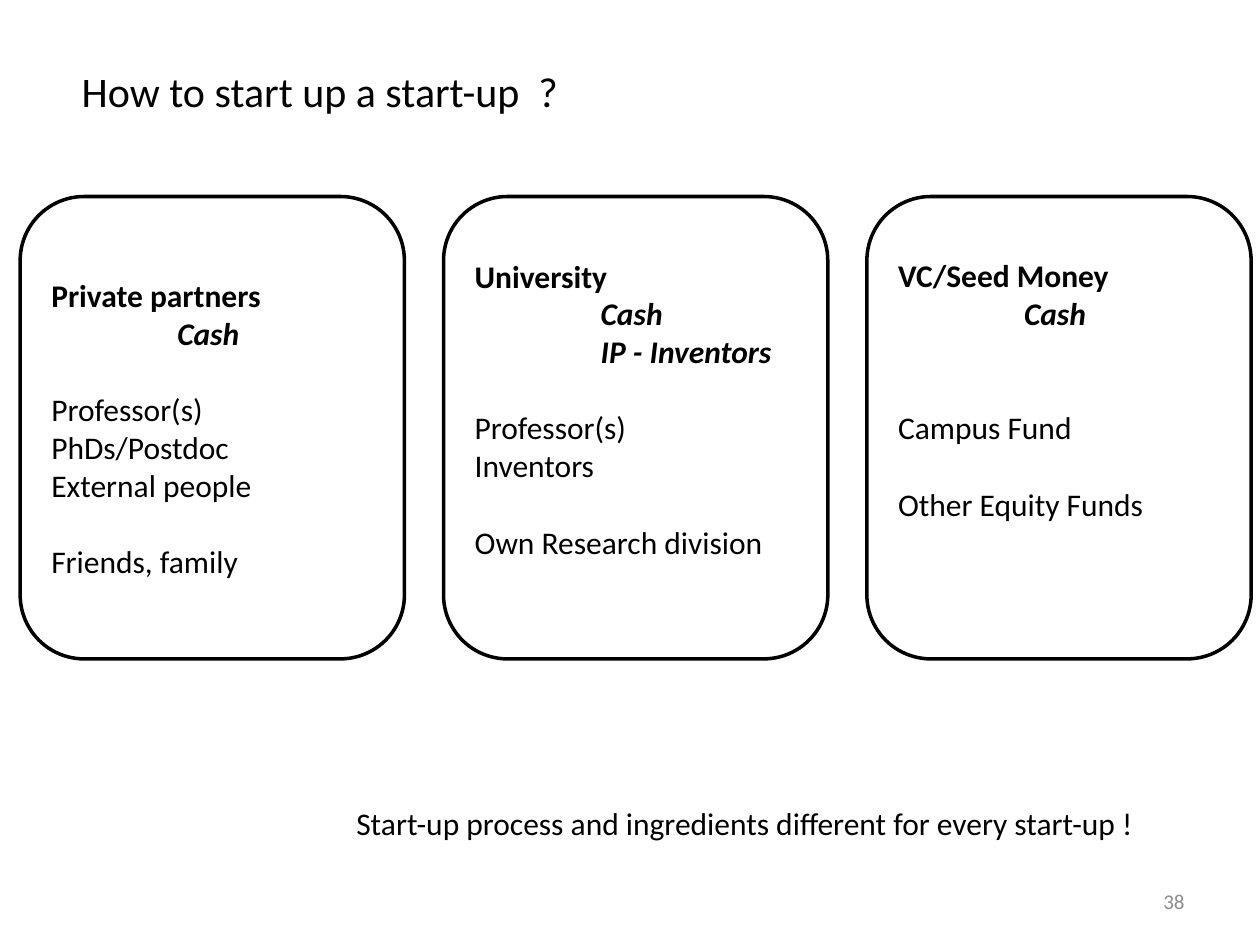
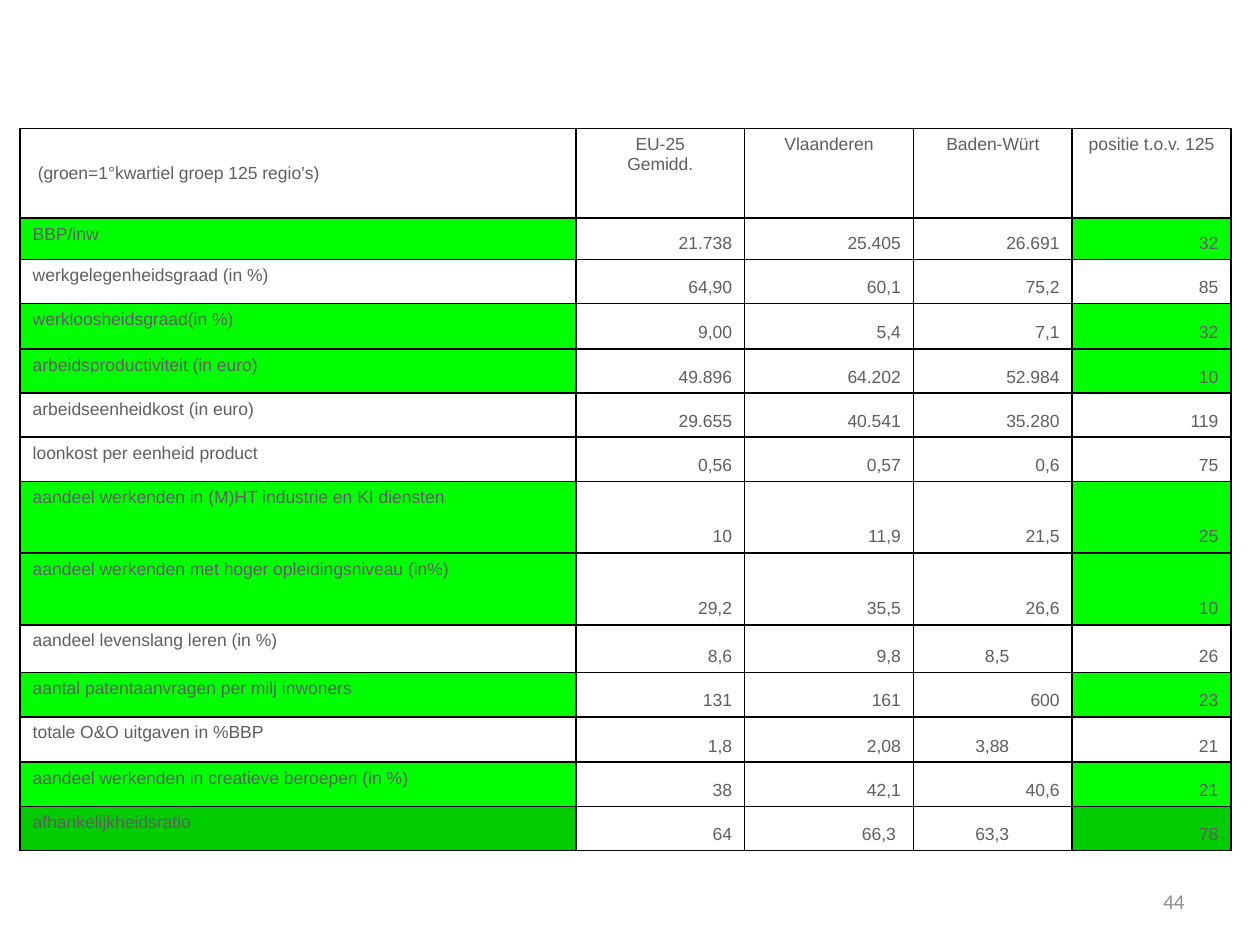
from lxml import etree
from pptx import Presentation
from pptx.dml.color import RGBColor
from pptx.enum.shapes import MSO_SHAPE
from pptx.enum.text import MSO_ANCHOR, PP_ALIGN
from pptx.oxml.ns import qn
from pptx.util import Inches, Pt

ROUNDED = MSO_SHAPE.ROUNDED_RECTANGLE
TOP, MIDDLE, BOTTOM = MSO_ANCHOR.TOP, MSO_ANCHOR.MIDDLE, MSO_ANCHOR.BOTTOM
LEFT, CENTER, RIGHT = PP_ALIGN.LEFT, PP_ALIGN.CENTER, PP_ALIGN.RIGHT


class Theme:
    black = RGBColor(0x00, 0x00, 0x00)
    white = RGBColor(0xFF, 0xFF, 0xFF)
    page_gray = RGBColor(0x8C, 0x8C, 0x8C)
    table_gray = RGBColor(0x5F, 0x5F, 0x5F)
    green = RGBColor(0x00, 0xFF, 0x00)
    dark_green = RGBColor(0x00, 0xCC, 0x00)
    body_font, table_font = "Calibri", "Arial"
    title_size, body_size = Pt(24), Pt(18)
    page_size, table_size = Pt(12), Pt(10)
    blank_line = Pt(22)
    card_line, border = Pt(2), Pt(1)


def add_run(p, text, size=Theme.body_size, color=Theme.black, font=Theme.body_font):
    r = p.add_run()
    r.text = text
    r.font.size, r.font.name = size, font
    r.font.color.rgb = color
    return r


def add_text(s, box, text, size=Theme.body_size, color=Theme.black,
             align=LEFT, anchor=TOP, wrap=False):
    """Add a one-line text box; box is left, top, width, height in inches."""
    tf = s.shapes.add_textbox(*(Inches(v) for v in box)).text_frame
    tf.word_wrap = wrap
    tf.vertical_anchor = anchor
    p = tf.paragraphs[0]
    p.alignment = align
    add_run(p, text, size, color)


prs = Presentation()
prs.slide_width, prs.slide_height = Inches(10), Inches(7.5)

slides = []
for page in ("38", "44"):
    s = prs.slides.add_slide(prs.slide_layouts[6])
    add_text(s, (7.17, 6.95, 2.33, 0.4), page, Theme.page_size, Theme.page_gray,
             RIGHT, MIDDLE, wrap=True)
    slides.append(s)
startup_slide, regions_slide = slides

# Slide 1: three sources of a start-up
add_text(startup_slide, (0.55, 0.47, 4.1, 0.5), "How to start up a start-up  ?",
         Theme.title_size)

# Heading, contributions, groups of people, blank lines before them, lines kept free below
cards = [
    ("Private partners", ["Cash"],
     [["Professor(s)", "PhDs/Postdoc", "External people"], ["Friends, family"]], 1, 0),
    ("University", ["Cash", "IP - Inventors"],
     [["Professor(s)", "Inventors"], ["Own Research division"]], 1, 1),
    ("VC/Seed Money", ["Cash"],
     [["Campus Fund"], ["Other Equity Funds"]], 2, 2),
]
for i, (heading, contributions, groups, gap_lines, free_lines) in enumerate(cards):
    card = startup_slide.shapes.add_shape(
        ROUNDED, Inches(0.16 + 3.36 * i), Inches(1.56), Inches(3.05), Inches(3.67))
    card.shadow.inherit = False
    card.fill.solid()
    card.fill.fore_color.rgb = Theme.white
    card.line.color.rgb = Theme.black
    card.line.width = Theme.card_line
    tf = card.text_frame
    tf.word_wrap = True
    tf.vertical_anchor = MIDDLE
    tf.margin_bottom = Inches(0.05) + free_lines * Theme.blank_line
    p = tf.paragraphs[0]
    p.alignment = LEFT
    add_run(p, heading).font.bold = True
    for contribution in contributions:
        p = tf.add_paragraph()
        p.alignment = LEFT
        p._p.get_or_add_pPr().set("marL", str(Inches(1)))
        r = add_run(p, contribution)
        r.font.bold = r.font.italic = True
    for g, group in enumerate(groups):
        for n, person in enumerate(group):
            p = tf.add_paragraph()
            p.alignment = LEFT
            if n == 0:
                p.space_before = Theme.blank_line * (gap_lines if g == 0 else 1)
            add_run(p, person)

add_text(startup_slide, (2.73, 6.33, 6.54, 0.4),
         "Start-up process and ingredients different for every start-up !")

# Slide 2: regional indicators
col_widths = [4.41, 1.34, 1.34, 1.26, 1.26]
row_heights = [0.71, 0.33, 0.35, 0.36, 0.35, 0.35, 0.35,
               0.57, 0.57, 0.38, 0.35, 0.36, 0.35, 0.35]
header = ["(groen=1°kwartiel groep 125 regio’s)", "EU-25\nGemidd.", "Vlaanderen",
          "Baden-Würt", "positie t.o.v. 125"]
green, dark_green = Theme.green, Theme.dark_green
indicators = [
    (green, "BBP/inw", "21.738", "25.405", "26.691", "32"),
    (None, "werkgelegenheidsgraad (in %)", "64,90", "60,1", "75,2", "85"),
    (green, "werkloosheidsgraad(in %)", "9,00", "5,4", "7,1", "32"),
    (green, "arbeidsproductiviteit (in euro)", "49.896", "64.202", "52.984", "10"),
    (None, "arbeidseenheidkost (in euro)", "29.655", "40.541", "35.280", "119"),
    (None, "loonkost per eenheid product", "0,56", "0,57", "0,6", "75"),
    (green, "aandeel werkenden in (M)HT industrie en KI diensten",
     "10", "11,9", "21,5", "25"),
    (green, "aandeel werkenden met hoger opleidingsniveau (in%)",
     "29,2", "35,5", "26,6", "10"),
    (None, "aandeel levenslang leren (in %)", "8,6", "9,8", "8,5", "26"),
    (green, "aantal patentaanvragen per milj inwoners", "131", "161", "600", "23"),
    (None, "totale O&O uitgaven in %BBP", "1,8", "2,08", "3,88", "21"),
    (green, "aandeel werkenden in creatieve beroepen (in %)",
     "38", "42,1", "40,6", "21"),
    (dark_green, "afhankelijkheidsratio", "64", "66,3", "63,3", "78"),
]
# Right margins of the values set in from the edge, by row and column
inset_values = {(9, 3): 0.5, (11, 3): 0.5, (13, 3): 0.5, (13, 2): 0.14}

table = regions_slide.shapes.add_table(
    len(row_heights), len(col_widths), Inches(0.16), Inches(1.02),
    Inches(sum(col_widths)), Inches(sum(row_heights))).table
table.first_row = table.horz_banding = False
for column, width in zip(table.columns, col_widths):
    column.width = Inches(width)
for row, height in zip(table.rows, row_heights):
    row.height = Inches(height)

for i, (color, *texts) in enumerate([(None, *header), *indicators]):
    for j, text in enumerate(texts):
        cell = table.cell(i, j)
        tcPr = cell._tc.get_or_add_tcPr()
        for side in ("a:lnL", "a:lnR", "a:lnT", "a:lnB"):
            ln = etree.SubElement(tcPr, qn(side), w=str(Theme.border))
            fill = etree.SubElement(ln, qn("a:solidFill"))
            etree.SubElement(fill, qn("a:srgbClr"), val=str(Theme.black))
        if color and j in (0, 4):
            cell.fill.solid()
            cell.fill.fore_color.rgb = color
        else:
            cell.fill.background()
        if j == 0:
            align, cell.vertical_anchor = LEFT, MIDDLE if i == 0 else TOP
        elif i == 0:
            align, cell.vertical_anchor = CENTER, TOP
        else:
            align, cell.vertical_anchor = RIGHT, BOTTOM
        cell.margin_left = Inches(0.14 if i == j == 0 else 0.1)
        cell.margin_right = Inches(inset_values.get((i, j), 0.1))
        tf = cell.text_frame
        for n, line in enumerate(text.split("\n")):
            p = tf.add_paragraph() if n else tf.paragraphs[0]
            p.alignment = align
            add_run(p, line, Theme.table_size, Theme.table_gray, Theme.table_font)

prs.save("out.pptx")
